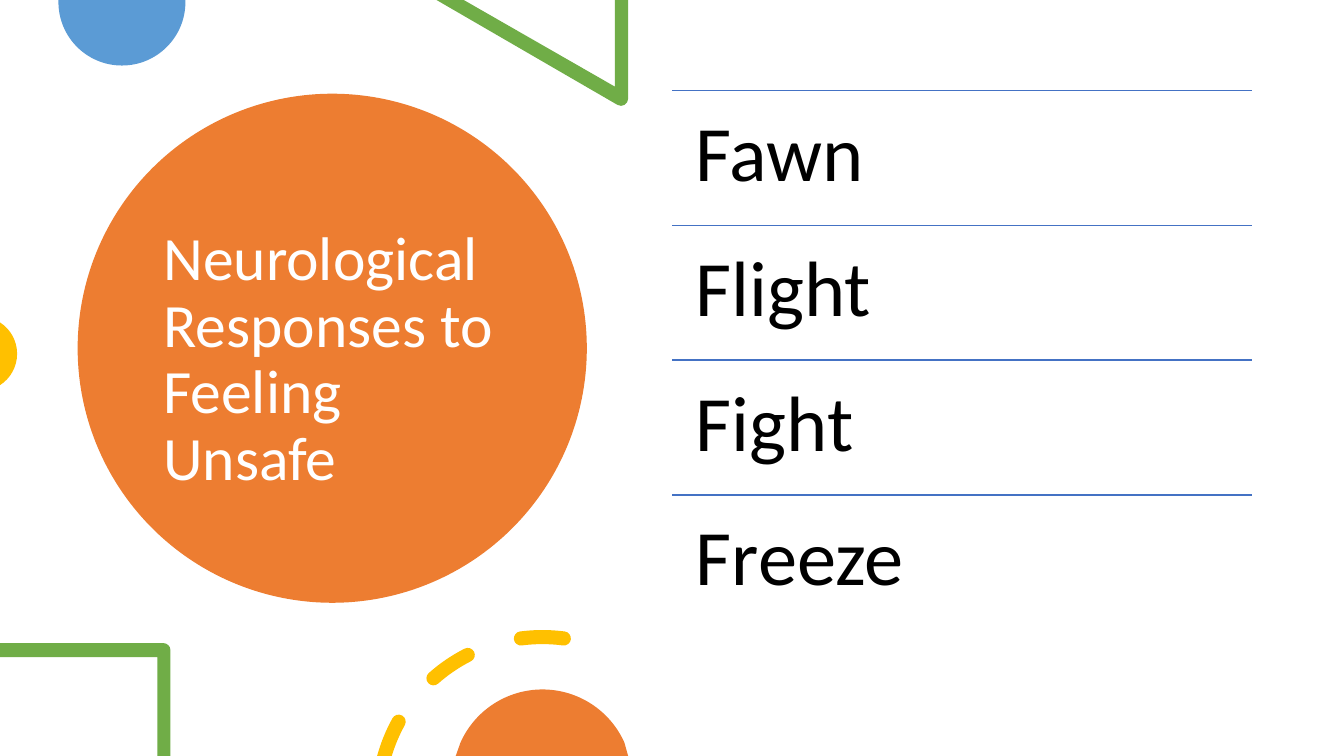
from dataclasses import dataclass
from math import ceil, cos, radians, sin, tan

from lxml import etree
from pptx import Presentation
from pptx import util as u
from pptx.dml.color import RGBColor
from pptx.enum import shapes, text
from pptx.oxml.ns import qn

Point = tuple[float, float]
Step = tuple[Point, ...]
Ring = list[Step]

HUES = {"orange": "ED7D31", "blue": "5B9BD5", "green": "70AD47", "gold": "FFC000",
        "rule": "4472C4", "white": "FFFFFF", "black": "000000"}
FONT = "Calibri"
WIDE, HIGH = 13.33, 7.5
HUB, ORBIT, HALF = (5.38, 7.95), 1.63, 0.07
LEFT, TOP, SPAN, STEP = 6.67, 0.9, 5.75, 4.01 / 3
WORDS = ["Fawn", "Flight", "Fight", "Freeze"]


@dataclass
class Decor:
    """A filled outline whose rings mix points and three-point curves."""
    hue: str
    rings: list[Ring]


def tone(name: str) -> RGBColor:
    """Return a named colour."""
    return RGBColor.from_string(HUES[name])


def line(*points: Point) -> Ring:
    """Return straight steps through the points."""
    return [(point,) for point in points]


def polar(mid: Point, size: float, turn: float) -> Point:
    """Return the point at an angle in degrees, clockwise from the right."""
    return mid[0] + size * cos(radians(turn)), mid[1] + size * sin(radians(turn))


def arc(mid: Point, size: float, start: float, end: float) -> Ring:
    """Return an arc as its first point and curves of up to a quarter turn."""
    count = ceil(abs(end - start) / 90)
    turn = (end - start) / count
    pull = 4 / 3 * tan(radians(turn) / 4) * size
    ring = line(polar(mid, size, start))
    for i in range(count):
        a, b = start + i * turn, start + (i + 1) * turn
        head, tail = polar(mid, size, a), polar(mid, size, b)
        ring.append((polar(head, pull, a + 90), polar(tail, pull, b - 90), tail))
    return ring


def dash(start: float, end: float, back: float | None = None) -> Ring:
    """Return a dash on the orbit, flat at its start if back is given."""
    ring = (arc(HUB, ORBIT + HALF, start, end)
            + arc(polar(HUB, ORBIT, end), HALF, end, end + 180)[1:]
            + arc(HUB, ORBIT - HALF, end, start if back is None else back)[1:])
    if back is None:
        ring += arc(polar(HUB, ORBIT, start), HALF, start + 180, start + 360)[1:]
    return ring


def paint(shape, hue: str) -> None:
    """Give a shape a flat fill with no line or shadow."""
    shape.fill.solid()
    shape.fill.fore_color.rgb = tone(hue)
    shape.line.fill.background()
    shape.shadow.inherit = False


def bend(shape, rings: list[Ring]) -> None:
    """Turn the triples of straight segments that stand for curves into curves."""
    nodes = iter(list(shape.element.iter(qn("a:lnTo"))))
    for step in (step for ring in rings for step in ring[1:]):
        parts = [next(nodes) for _ in step]
        if len(parts) == 3:
            curve = etree.Element(qn("a:cubicBezTo"))
            parts[0].addprevious(curve)
            for part in parts:
                curve.append(part[0])
                part.getparent().remove(part)


def draw(slide, decor: Decor) -> None:
    """Draw a decoration as one freeform."""
    pen = None
    for ring in decor.rings:
        first, *rest = [(u.Inches(x), u.Inches(y)) for step in ring for x, y in step]
        if pen is None:
            pen = slide.shapes.build_freeform(*first)
        else:
            pen.move_to(*first)
        pen.add_line_segments(rest)
    shape = pen.convert_to_shape()
    bend(shape, decor.rings)
    paint(shape, decor.hue)


def write(frame, words: str, size: int, hue: str) -> None:
    """Fill a text frame with one left-aligned paragraph."""
    frame.text = words
    frame.word_wrap = True
    frame.auto_size = text.MSO_AUTO_SIZE.NONE
    para = frame.paragraphs[0]
    para.alignment = text.PP_ALIGN.LEFT
    para.line_spacing = 0.9
    para.font.name, para.font.size = FONT, u.Pt(size)
    para.font.color.rgb = tone(hue)


def head(slide) -> None:
    """Set the title over its orange disc."""
    title = slide.shapes.title
    title.left, title.top = u.Inches(1.52), u.Inches(1.35)
    title.width, title.height = u.Inches(3.54), u.Inches(4.45)
    write(title.text_frame, "Neurological Responses to Feeling Unsafe", 44, "white")
    title.text_frame.vertical_anchor = text.MSO_ANCHOR.MIDDLE
    disc = slide.shapes.add_shape(shapes.MSO_SHAPE.OVAL, u.Inches(0.77), u.Inches(0.93),
                                  u.Inches(5.05), u.Inches(5.05))
    paint(disc, "orange")
    title.element.addprevious(disc.element)


def row(group, word: str, top: float) -> None:
    """Draw a ruled row with its word."""
    x, y, wide = u.Inches(LEFT), u.Inches(top), u.Inches(SPAN)
    rule = group.shapes.add_connector(shapes.MSO_CONNECTOR.STRAIGHT, x, y, x + wide, y)
    rule.line.color.rgb = tone("rule")
    rule.line.width = u.Pt(1)
    etree.SubElement(rule.element.spPr, qn("a:effectLst"))
    frame = group.shapes.add_textbox(x, y, wide, u.Inches(STEP)).text_frame
    frame.margin_left = frame.margin_right = u.Inches(0.23)
    frame.margin_top = frame.margin_bottom = u.Inches(0.23)
    write(frame, word, 56, "black")


UPPER = [
    Decor("blue", [line((1.84, 0), (0.58, 0)) + arc((1.21, 0.02), 0.63, 180, 0)]),
    Decor("green", [line((6.23, 0), (6.1, 0), (6.1, 0.86), (4.6, 0), (4.33, 0))
                    + arc((6.16, 0.98), HALF, 120, 0)]),
    Decor("gold", [arc((-0.2, 3.51), 0.37, -57.3, 57.3)]),
]
LOWER = [
    Decor("green", [line((0, 6.38)) + arc((1.62, 6.45), HALF, 270, 360)
                    + line((1.69, HIGH), (1.56, HIGH), (1.56, 6.52), (0, 6.52))]),
    Decor("gold", [dash(195.4, 209, 196.8), dash(228.5, 243), dash(262.5, 277.5)]),
    Decor("orange", [arc((5.38, 7.73), 0.89, 204, 336)
                     + line((6.23, HIGH), (4.52, HIGH))]),
]


def main() -> None:
    """Build and save the slide."""
    deck = Presentation()
    deck.slide_width, deck.slide_height = u.Inches(WIDE), u.Inches(HIGH)
    slide = deck.slides.add_slide(deck.slide_layouts[5])
    head(slide)
    for decor in UPPER:
        draw(slide, decor)
    group = slide.shapes.add_group_shape()
    for i, word in enumerate(WORDS):
        row(group, word, TOP + i * STEP)
    for decor in LOWER:
        draw(slide, decor)
    deck.save("out.pptx")


if __name__ == "__main__":
    main()
